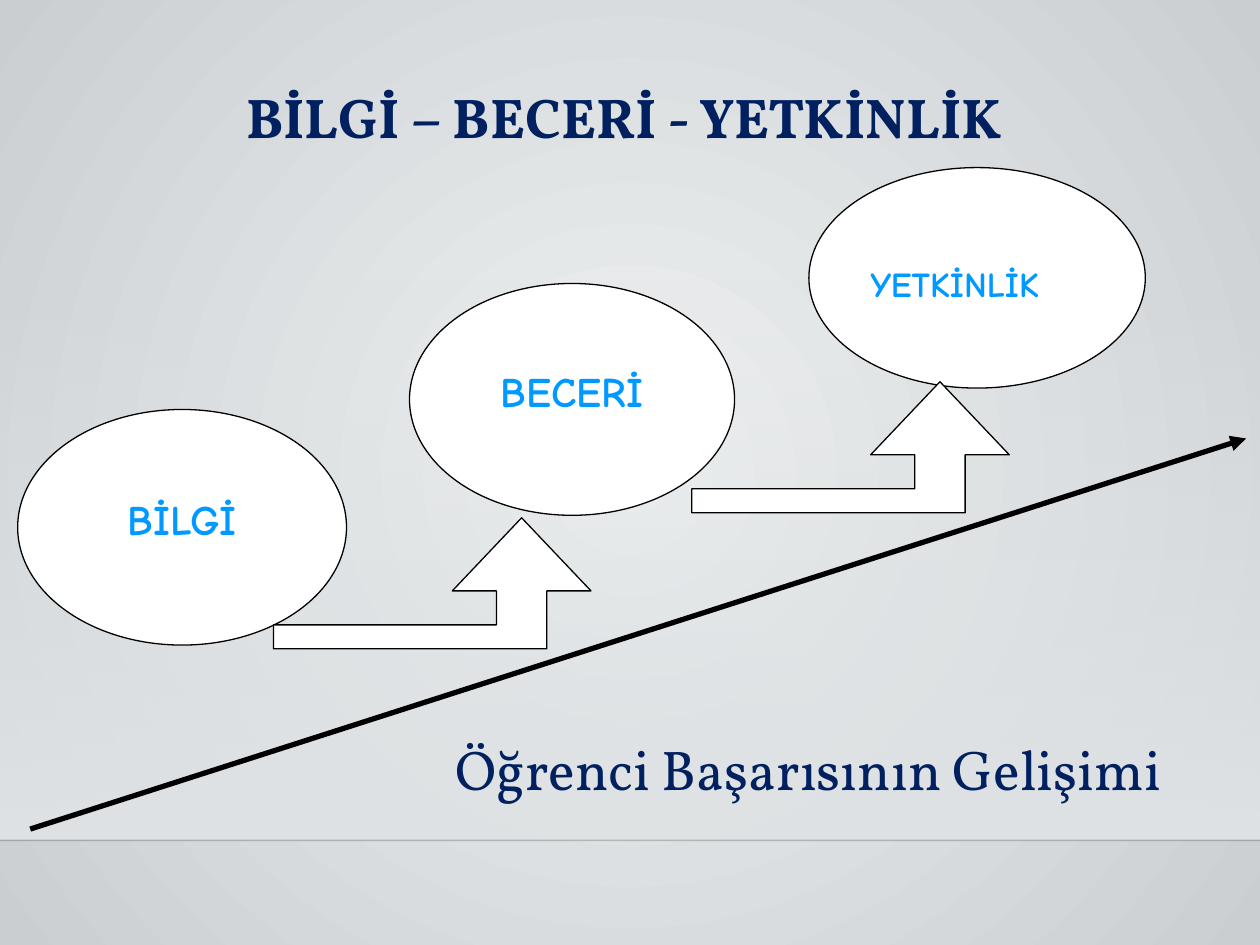
"""Build a slide on the steps from knowledge through skill to competence."""
from lxml import etree
from pptx import Presentation
from pptx.dml.color import RGBColor
from pptx.enum.shapes import MSO_CONNECTOR, MSO_SHAPE
from pptx.enum.text import MSO_ANCHOR, PP_ALIGN
from pptx.oxml import parse_xml
from pptx.oxml.ns import nsdecls, qn
from pptx.util import Inches, Pt

OVAL, RECT = MSO_SHAPE.OVAL, MSO_SHAPE.RECTANGLE
LINE = MSO_CONNECTOR.STRAIGHT
TOP, BASE = MSO_ANCHOR.TOP, MSO_ANCHOR.BOTTOM
LEFT, MID = PP_ALIGN.LEFT, PP_ALIGN.CENTER
WHITE = RGBColor(0xFF, 0xFF, 0xFF)
BLACK = RGBColor(0, 0, 0)
NAVY = RGBColor(0x00, 0x20, 0x60)
BLUE = RGBColor(0x00, 0x99, 0xFF)
PALE = RGBColor(0xF0, 0xF2, 0xF3)
GREY = RGBColor(0xCA, 0xCE, 0xD0)
MIST = RGBColor(0xDF, 0xE3, 0xE5)

deck = Presentation()
deck.slide_width, deck.slide_height = Inches(10), Inches(7.5)
UNIT = deck.slide_width // 100
slide = deck.slides.add_slide(deck.slide_layouts[6])
shapes = slide.shapes


def grid(*cells):
    return [round(cell * UNIT) for cell in cells]


def write(shape, text, size, font, color, bold, align, anchor):
    frame = shape.text_frame
    frame.word_wrap = True
    frame.vertical_anchor = anchor
    para = frame.paragraphs[0]
    para.alignment = align
    run = para.add_run()
    run.text = text
    run.font.size, run.font.name, run.font.bold = Pt(size), font, bold
    run.font.color.rgb = color


back = slide.background.fill
back.gradient()
for stop, color in zip(back.gradient_stops, (PALE, GREY)):
    stop.color.rgb = color
lin = slide.element.find(".//" + qn("a:lin"))
lin.getparent().replace(lin, parse_xml(
    f'<a:path {nsdecls("a")} path="circle">'
    '<a:fillToRect l="50000" t="50000" r="50000" b="50000"/></a:path>'))

veil = shapes.add_shape(RECT, *grid(0, 22, 100, 44.6))
veil.shadow.inherit = False
veil.line.fill.background()
veil.fill.gradient()
veil.fill.gradient_angle = 270
for stop in veil.fill.gradient_stops:
    stop.color.rgb = MIST
tint = veil.element.find(".//" + qn("a:gs"))[0]
etree.SubElement(tint, qn("a:alpha"), val="0")

rules = []
for ends, width in (((0, 66.7, 100, 66.7), 1), ((2.4, 65.8, 98.9, 34.8), 3)):
    rule = shapes.add_connector(LINE, *grid(*ends))
    rule.line.color.rgb = BLACK
    rule.line.width = Pt(width)
    etree.SubElement(rule.element.spPr, qn("a:effectLst"))
    rules.append(rule)
floor, climb = rules
shade = floor.element.find(".//" + qn("a:srgbClr"))
etree.SubElement(shade, qn("a:alpha"), val="20000")
stroke = climb.element.find(".//" + qn("a:ln"))
etree.SubElement(stroke, qn("a:tailEnd"), type="triangle")

steps = (
    ("BİLGİ", (1.4, 32.5, 26.1, 18.7), 24, MID, 3.9),
    ("BECERİ", (32.5, 22.5, 25.8, 18.4), 24, MID, 3.8),
    ("YETKİNLİK", (64.2, 13.3, 26.7, 17.5), 20, LEFT, 5),
)
bodies = []
for text, box, size, align, drop in steps:
    oval = shapes.add_shape(OVAL, *grid(*box))
    write(oval, text, size, "Comic Neue", BLUE, True, align, TOP)
    oval.text_frame.margin_top = round(drop * UNIT)
    bodies.append(oval)

bend = ((14.2, 5.8), (17.7, 5.8), (17.7, 8.5), (0, 8.5), (0, 10.4),
        (21.7, 10.4), (21.7, 5.8), (25.2, 5.8))
for left, top in ((21.7, 41.1), (54.9, 30.3)):
    arrow = shapes.build_freeform(*grid(left + 19.7, top))
    arrow.add_line_segments([grid(left + x, top + y) for x, y in bend])
    bodies.append(arrow.convert_to_shape())

for body in bodies:
    body.shadow.inherit = False
    body.fill.solid()
    body.fill.fore_color.rgb = WHITE
    body.line.color.rgb = BLACK
    body.line.width = Pt(0.75)

labels = (
    ("BİLGİ – BECERİ - YETKİNLİK", (8.3, 4.9, 82.5, 7.5), True, BASE),
    ("Öğrenci Başarısının Gelişimi", (29.7, 57.8, 69, 6.4), False, TOP),
)
for text, box, bold, anchor in labels:
    label = shapes.add_textbox(*grid(*box))
    write(label, text, 32, "Vollkorn", NAVY, bold, MID, anchor)

deck.save("out.pptx")
